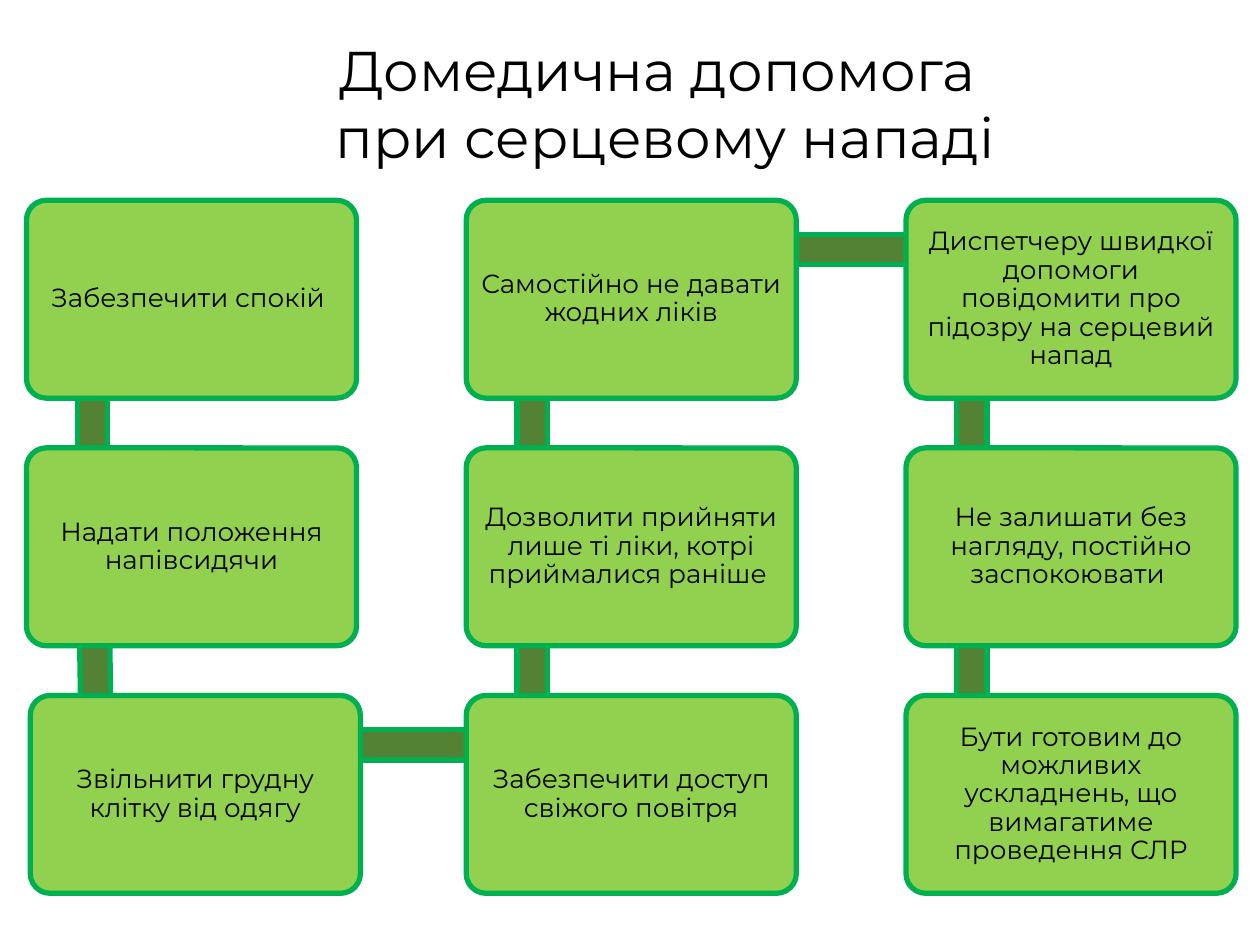
import math
import pptx
import pptx.util
import pptx.dml.color
import pptx.enum.shapes
import pptx.enum.text

Inches, Pt = pptx.util.Inches, pptx.util.Pt
SHAPE = pptx.enum.shapes.MSO_SHAPE
ANCHOR = pptx.enum.text.MSO_ANCHOR
ALIGN = pptx.enum.text.PP_ALIGN

COLORS = {"card": "92D050", "bar": "548235", "line": "00B050", "text": "000000"}
FONT = "Montserrat"
CARD_W, CARD_H = 2.62, 1.57
COL_STEP, ROW_STEP = 3.49, 1.965
BAR_W = 0.24
PIVOT_X, PIVOT_Y = 0.2 * CARD_W, 0.25 * CARD_H  # where bars meet inside a card

TITLE = ["Домедична допомога ", "при серцевому нападі"]
# Step text, column, row, shift to the right
STEPS = [
    ("Забезпечити спокій ", 0, 0, 0),
    ("Надати положення напівсидячи", 0, 1, 0),
    ("Звільнити грудну клітку від одягу", 0, 2, 0.03),
    ("Забезпечити доступ свіжого повітря", 1, 2, 0),
    ("Дозволити прийняти лише ті ліки, котрі приймалися раніше ", 1, 1, 0),
    ("Самостійно не давати жодних ліків", 1, 0, 0),
    ("Диспетчеру швидкої допомоги повідомити про підозру на серцевий напад", 2, 0, 0),
    ("Не залишати без нагляду, постійно заспокоювати ", 2, 1, 0),
    ("Бути готовим до можливих ускладнень, що вимагатиме проведення СЛР", 2, 2, 0),
]


def rgb(name):
    return pptx.dml.color.RGBColor.from_string(COLORS[name])


def add_run(p, text, size):
    p.alignment = ALIGN.CENTER
    r = p.add_run()
    r.text = text
    r.font.name, r.font.size = FONT, Pt(size)
    r.font.color.rgb = rgb("text")


def add_block(slide, kind, fill, left, top, width, height):
    sp = slide.shapes.add_shape(
        kind, Inches(left), Inches(top), Inches(width), Inches(height))
    sp.shadow.inherit = False
    sp.fill.solid()
    sp.fill.fore_color.rgb = rgb(fill)
    sp.line.color.rgb = rgb("line")
    sp.line.width = Pt(3)
    return sp


def add_title(slide, left, top, width, height):
    sp = slide.shapes.title
    sp.left, sp.top = Inches(left), Inches(top)
    sp.width, sp.height = Inches(width), Inches(height)
    tf = sp.text_frame
    tf.word_wrap = False
    tf.auto_size = pptx.enum.text.MSO_AUTO_SIZE.SHAPE_TO_FIT_TEXT
    tf.vertical_anchor = ANCHOR.TOP
    for i, line in enumerate(TITLE):
        p = tf.add_paragraph() if i else tf.paragraphs[0]
        p.space_before = Pt(0)
        add_run(p, line, 32)


def add_bar(slide, start, end):
    """Bar between the pivots of two cards, turned along its direction."""
    (x1, y1), (x2, y2) = start, end
    length = math.dist(start, end)
    sp = add_block(slide, SHAPE.RECTANGLE, "bar",
                   (x1 + x2 - length) / 2 + PIVOT_X,
                   (y1 + y2 - BAR_W) / 2 + PIVOT_Y, length, BAR_W)
    sp.rotation = math.degrees(math.atan2(y2 - y1, x2 - x1)) % 360


def add_card(slide, left, top, text):
    sp = add_block(slide, SHAPE.ROUNDED_RECTANGLE, "card", left, top, CARD_W, CARD_H)
    sp.adjustments[0] = 0.1
    tf = sp.text_frame
    tf.word_wrap = True
    tf.vertical_anchor = ANCHOR.MIDDLE
    tf.margin_left = tf.margin_right = tf.margin_top = tf.margin_bottom = Inches(0.06)
    p = tf.paragraphs[0]
    p.line_spacing = 0.9
    add_run(p, text, 15)


def add_steps(slide, left, top):
    """Snake of cards; each bar lies beneath the cards it joins."""
    places = [(left + col * COL_STEP + shift, top + row * ROW_STEP)
              for _, col, row, shift in STEPS]
    for i, (x, y) in enumerate(places):
        if i + 1 < len(places):
            add_bar(slide, (x, y), places[i + 1])
        add_card(slide, x, y, STEPS[i][0])


def main():
    prs = pptx.Presentation()
    prs.slide_width, prs.slide_height = Inches(10), Inches(7.5)
    slide = prs.slides.add_slide(prs.slide_layouts[5])  # title only
    add_title(slide, 2.37, 0.23, 5.82, 1.18)
    add_steps(slide, 0.21, 1.59)
    prs.save("out.pptx")


if __name__ == "__main__":
    main()
